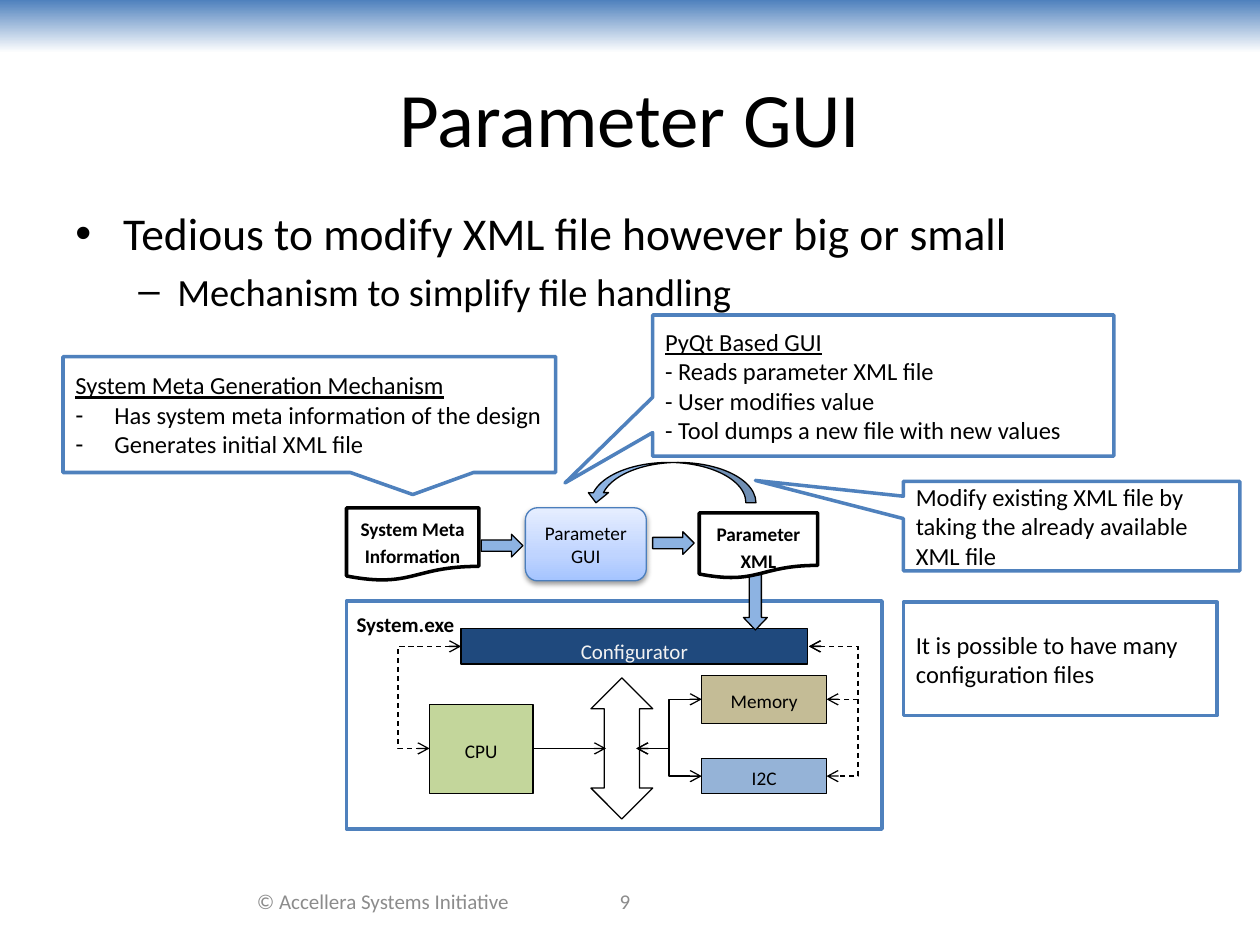
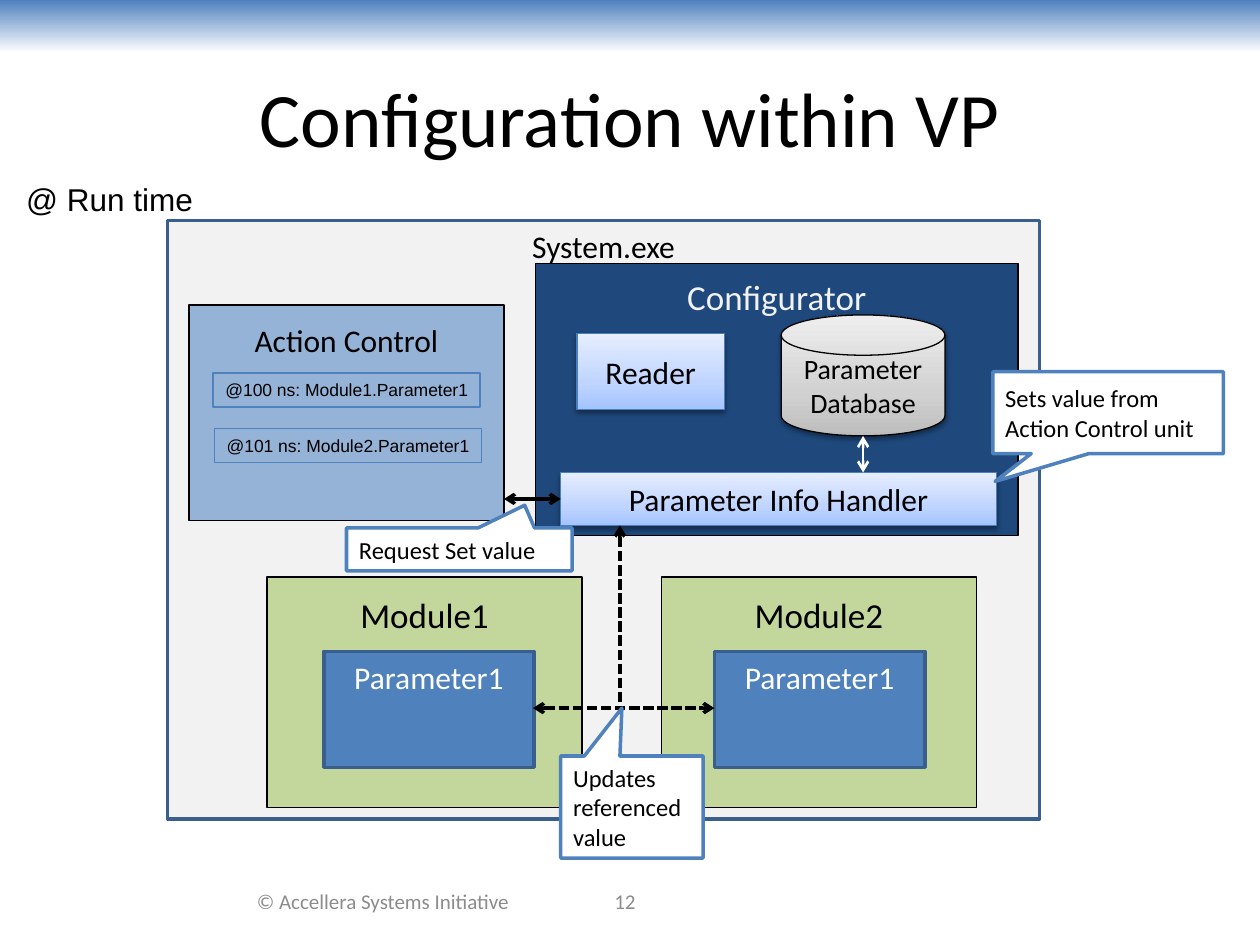
from dataclasses import dataclass

from lxml import etree
from pptx import Presentation
from pptx import util as u
from pptx.dml.color import RGBColor
from pptx.enum import dml, shapes, text
from pptx.oxml import ns

KIND = shapes.MSO_SHAPE
LEFT, CENTER = text.PP_ALIGN.LEFT, text.PP_ALIGN.CENTER
TOP, MIDDLE = text.MSO_ANCHOR.TOP, text.MSO_ANCHOR.MIDDLE
DASH, SHORT_DASH = dml.MSO_LINE.DASH, dml.MSO_LINE.SQUARE_DOT


@dataclass(frozen=True)
class Theme:
    """Colours, fonts and type sizes of the deck."""
    font: str = "Calibri"
    plain_font: str = "Arial"
    black: str = "000000"
    white: str = "FFFFFF"
    blue: str = "4F81BD"
    edge: str = "3A5F8C"
    glossy_edge: str = "4B7EBC"
    navy: str = "1F497D"
    sky: str = "95B3D7"
    arrow: str = "8DB3E2"
    green: str = "C3D69B"
    tan: str = "C4BC96"
    pale: str = "F2F2F2"
    muted: str = "8C8C8C"
    band: tuple = ((0, "4F81BD"), (100, "FFFFFF"))
    glossy: tuple = ((0, "A4C4FF"), (35, "BFD4FF"), (100, "E6EEFF"))
    silver: tuple = ((0, "BDBDBD"), (35, "D1D1D1"), (100, "EEEEEE"))
    title: int = 44
    bullet: int = 26
    sub_bullet: int = 22
    block: int = 20
    heading: int = 18
    database: int = 16
    note: int = 14
    small: int = 12
    label: int = 11
    tiny: int = 10


T = Theme()
SPACED = {"line_spacing": 1.15, "space_after": u.Pt(10)}


def apply(target, formats):
    """Set every attribute in a dict of format values."""
    for name, value in formats.items():
        setattr(target, name, value)


def add_xml(parent, tag, **attributes):
    """Append a DrawingML element to a parent."""
    element = etree.SubElement(parent, ns.qn("a:" + tag))
    for name, value in attributes.items():
        element.set(name, str(value))
    return element


def set_bullet(paragraph, mark, indent, hanging):
    """Give a paragraph a hanging bullet."""
    properties = paragraph._p.get_or_add_pPr()
    properties.set("marL", str(u.Inches(indent)))
    properties.set("indent", str(-u.Inches(hanging)))
    add_xml(properties, "buFont", typeface=T.plain_font)
    add_xml(properties, "buChar", char=mark)


def write(frame, lines, size, color=T.black, align=CENTER, anchor=MIDDLE, inset=None,
          spaced=False, face=T.font, bold=False, wrap=True):
    """Fill a text frame; a line is a string or a (text, options) pair."""
    apply(frame, {"word_wrap": wrap, "vertical_anchor": anchor})
    if inset is not None:
        sides = ("left", "top", "right", "bottom")
        apply(frame, {f"margin_{side}": u.Inches(inset) for side in sides})
    for index, line in enumerate([lines] if isinstance(lines, str) else lines):
        wording, options = (line, {}) if isinstance(line, str) else line
        paragraph = frame.add_paragraph() if index else frame.paragraphs[0]
        if "bullet" in options:
            set_bullet(paragraph, *options["bullet"])
        apply(paragraph, {"alignment": align, **(SPACED if spaced else {}),
                          **options.get("paragraph", {})})
        run = paragraph.add_run()
        run.text = wording
        apply(run.font, {"size": u.Pt(size), "name": face, "bold": bold,
                         **options.get("font", {})})
        run.font.color.rgb = RGBColor.from_string(color)


def add_text(slide, box, lines, size, **style):
    """Add a text box."""
    area = slide.shapes.add_textbox(*map(u.Inches, box))
    write(area.text_frame, lines, size, **style)


def fill_gradient(shape, stops, angle):
    """Fill a shape with a linear gradient."""
    shape.fill.gradient()
    shape.fill.gradient_angle = angle
    stop_list = shape._element.spPr.find(".//" + ns.qn("a:gsLst"))
    for stop in list(stop_list):
        stop_list.remove(stop)
    for position, color in stops:
        add_xml(add_xml(stop_list, "gs", pos=position * 1000), "srgbClr", val=color)


def style_line(line, color, width, dash=None):
    """Set the colour, width and dash of a line."""
    line.color.rgb = RGBColor.from_string(color)
    apply(line, {"width": u.Pt(width), "dash_style": dash})


def add_figure(slide, box, fill, line=T.black, width=0.75, kind=KIND.RECTANGLE, adjust=(),
               lines=None, size=None, **style):
    """Add a preset shape with flat, gradient or no fill, and its text."""
    shape = slide.shapes.add_shape(kind, *map(u.Inches, box))
    shape.shadow.inherit = False
    for index, value in enumerate(adjust):
        shape.adjustments[index] = value
    if fill is None:
        shape.fill.background()
    elif isinstance(fill, str):
        shape.fill.solid()
        shape.fill.fore_color.rgb = RGBColor.from_string(fill)
    else:
        fill_gradient(shape, fill, 270 if fill == T.band else 90)
    if line:
        style_line(shape.line, line, width)
    else:
        shape.line.fill.background()
    if lines:
        write(shape.text_frame, lines, size, **style)
    return shape


def add_glossy(slide, box, label, size, fill=T.glossy, line=T.glossy_edge, **options):
    """Add a gradient shape with a soft shadow below."""
    shape = add_figure(slide, box, fill, line, lines=label, size=size, **options)
    effects = shape._element.spPr.find(ns.qn("a:effectLst"))
    shadow = add_xml(effects, "outerShdw", blurRad=u.Pt(3.1), dist=u.Pt(1.6),
                     dir=5400000, rotWithShape=0)
    add_xml(add_xml(shadow, "srgbClr", val=T.black), "alpha", val=38000)


def add_note(slide, box, lines, pointer=None):
    """Add a white note, with a callout pointer if one is given."""
    kind = KIND.RECTANGULAR_CALLOUT if pointer else KIND.RECTANGLE
    add_figure(slide, box, T.white, T.blue, 2, kind, pointer or (), lines, T.note, align=LEFT)


def add_block(slide, box, fill, label, size, **style):
    """Add a thin-edged block with a spaced label."""
    add_figure(slide, box, fill, lines=label, size=size, spaced=True, **style)


def add_document(slide, box, label):
    """Add a document symbol with a bold label."""
    add_figure(slide, box, T.white, width=2, kind=KIND.FLOWCHART_DOCUMENT, lines=label,
               size=T.label, anchor=TOP, spaced=True, bold=True)


def add_link(slide, start, end, color=T.black, width=0.75, dash=None, heads=("head", "tail"),
             bend=None):
    """Add an arrow, straight or stepped at x = bend."""
    stepped = bend is not None
    kind = shapes.MSO_CONNECTOR.ELBOW if stepped else shapes.MSO_CONNECTOR.STRAIGHT
    link = slide.shapes.add_connector(kind, *map(u.Inches, start + end))
    style_line(link.line, color, width, dash)
    for head in heads:
        add_xml(link.line._get_or_add_ln(), head + "End", type="arrow")
    properties = link._element.spPr
    add_xml(properties, "effectLst")
    if stepped:
        ratio = round((bend - start[0]) / (end[0] - start[0]) * 100000)
        add_xml(properties.find(".//" + ns.qn("a:avLst")), "gd", name="adj1",
                fmla=f"val {ratio}")


def start_slide(deck, title, number):
    """Add a slide with the band, title and footer."""
    slide = deck.slides.add_slide(deck.slide_layouts[6])
    add_figure(slide, (0, 0, 10, 0.42), T.band, None)
    add_text(slide, (0.5, 0.3, 9, 1.25), title, T.title)
    for left, width, wording in ((1.83, 2.42, "© Accellera Systems Initiative"),
                                 (4, 1.92, number)):
        add_text(slide, (left, 6.95, width, 0.4), wording, T.small, color=T.muted)
    return slide


def draw_system(slide):
    """Draw the inside of System.exe with its bus and links."""
    add_figure(slide, (2.75, 4.77, 4.25, 1.81), T.white, T.blue, 2, lines="System.exe",
               size=T.small, align=LEFT, anchor=TOP, inset=0.08, bold=True)
    for box, fill, label in (((3.41, 5.59, 0.82, 0.71), T.green, "CPU"),
                             ((5.57, 6.02, 0.99, 0.28), T.sky, "I2C"),
                             ((5.57, 5.36, 0.99, 0.38), T.tan, "Memory")):
        add_block(slide, box, fill, label, T.label, inset=0.08)
    add_block(slide, (3.66, 4.99, 2.75, 0.28), T.navy, "Configurator", T.small,
              color=T.pale, anchor=TOP)
    add_figure(slide, (4.69, 5.38, 0.49, 1.12), T.white, kind=KIND.UP_DOWN_ARROW,
               adjust=(0.5, 0.57))
    add_figure(slide, (5.9, 4.56, 0.19, 0.44), T.arrow, kind=KIND.DOWN_ARROW,
               adjust=(0.5, 0.52))
    add_link(slide, (4.23, 5.94), (4.81, 5.94), heads=("tail",))
    add_link(slide, (3.66, 5.13), (3.41, 5.94), dash=DASH, bend=3.16)
    for peripheral_y in (5.55, 6.16):
        add_link(slide, (5.57, peripheral_y), (5.05, 5.94), bend=5.31)
        add_link(slide, (6.42, 5.13), (6.56, peripheral_y), dash=DASH, bend=6.81)


def draw_parameter_gui(deck):
    """Build the slide on the parameter GUI."""
    slide = start_slide(deck, "Parameter GUI", "9")
    add_text(slide, (0.5, 1.58, 9, 4.92), [
        ("Tedious to modify XML file however big or small", {"bullet": ("•", 0.38, 0.38)}),
        ("Mechanism to simplify file handling",
         {"bullet": ("–", 0.81, 0.31), "font": {"size": u.Pt(T.sub_bullet)},
          "paragraph": {"space_before": u.Pt(4.4)}}),
    ], T.bullet, align=LEFT, anchor=TOP)
    draw_system(slide)
    add_document(slide, (5.55, 4.07, 0.94, 0.52), "Parameter XML")
    add_glossy(slide, (4.17, 4.03, 0.96, 0.58), "Parameter GUI", T.label,
               kind=KIND.ROUNDED_RECTANGLE)
    add_document(slide, (2.75, 4.03, 1.05, 0.58), "System Meta Information")
    for left, top in ((5.18, 4.22), (3.82, 4.24)):
        add_figure(slide, (left, top, 0.33, 0.18), T.arrow, kind=KIND.RIGHT_ARROW)
    underlined = {"font": {"underline": True}}
    dashed = {"bullet": ("-", 0.31, 0.31)}
    add_note(slide, (5.18, 2.5, 3.66, 1.12), [
        ("PyQt Based GUI", underlined), "- Reads parameter XML file",
        "- User modifies value", "- Tool dumps a new file with new values"], (-0.69, 0.69))
    add_note(slide, (0.5, 2.83, 3.91, 0.92), [
        ("System Meta Generation Mechanism", underlined),
        ("Has system meta information of the design", dashed),
        ("Generates initial XML file", dashed)], (0.21, 0.69))
    feedback = add_figure(slide, (4.65, 3.67, 1.35, 0.32), T.arrow,
                          kind=KIND.CURVED_DOWN_ARROW)
    feedback._element.spPr.xfrm.set("flipH", "1")
    add_note(slide, (7.17, 3.82, 2.67, 0.71),
             "Modify existing XML file by taking the already available XML file",
             (-0.94, -0.51))
    add_note(slide, (7.17, 4.78, 2.49, 0.9),
             "It is possible to have many configuration files")


def draw_configuration(deck):
    """Build the slide on configuration within the VP."""
    slide = start_slide(deck, "Configuration within VP", "12")
    add_figure(slide, (1.33, 1.75, 6.92, 4.75), T.pale, T.edge, 2, lines="System.exe",
               size=T.heading, anchor=TOP)
    add_block(slide, (4.25, 2.09, 3.83, 2.16), T.navy, "Configurator", T.block,
              color=T.pale, anchor=TOP)
    for module, module_left, parameter_left in (("Module1", 2.12, 2.57),
                                                ("Module2", 5.25, 5.67)):
        add_block(slide, (module_left, 4.58, 2.5, 1.83), T.green, module, T.block,
                  anchor=TOP, inset=0.08)
        add_figure(slide, (parameter_left, 5.17, 1.67, 0.92), T.blue, T.edge, 2,
                   lines="Parameter1", size=T.heading, color=T.white, anchor=TOP)
    add_glossy(slide, (4.58, 2.65, 1.17, 0.6), "Reader", T.heading)
    add_glossy(slide, (6.2, 2.5, 1.3, 0.96), "Parameter Database", T.database, T.silver,
               T.black, kind=KIND.FLOWCHART_MAGNETIC_DISK)
    add_glossy(slide, (4.45, 3.75, 3.46, 0.42), "Parameter Info Handler", T.heading)
    add_link(slide, (4.92, 4.17), (4.92, 5.62), width=2, dash=SHORT_DASH, heads=("head",))
    add_link(slide, (4.23, 5.62), (5.67, 5.62), width=2, dash=SHORT_DASH)
    add_block(slide, (1.5, 2.42, 2.5, 1.71), T.sky, "Action Control", T.heading,
              anchor=TOP, inset=0.08)
    for left, top, action in ((1.69, 2.96, "@100 ns: Module1.Parameter1"),
                              (1.7, 3.4, "@101 ns: Module2.Parameter1")):
        add_figure(slide, (left, top, 2.12, 0.27), None, T.blue, lines=action, size=T.tiny,
                   align=LEFT, anchor=TOP, face=T.plain_font, wrap=False)
    add_link(slide, (4, 3.96), (4.45, 3.96), width=2)
    add_text(slide, (0.11, 1.38, 2, 0.4), "@ Run time", T.heading, align=LEFT, anchor=TOP,
             face=T.plain_font)
    for box, wording, pointer in (
            ((7.88, 2.95, 1.83, 0.65), "Sets value from Action Control unit", (-0.49, 0.84)),
            ((2.75, 4.19, 1.79, 0.34), "Request Set value", (0.29, -1.03)),
            ((4.45, 6, 1.13, 0.81), "Updates referenced value", (-0.07, -0.97))):
        add_note(slide, box, wording, pointer)
    add_link(slide, (6.85, 3.46), (6.85, 3.75), T.white, 1.5)


def main():
    """Build and save the deck."""
    deck = Presentation()
    apply(deck, {"slide_width": u.Inches(10), "slide_height": u.Inches(7.5)})
    draw_parameter_gui(deck)
    draw_configuration(deck)
    deck.save("out.pptx")


if __name__ == "__main__":
    main()
